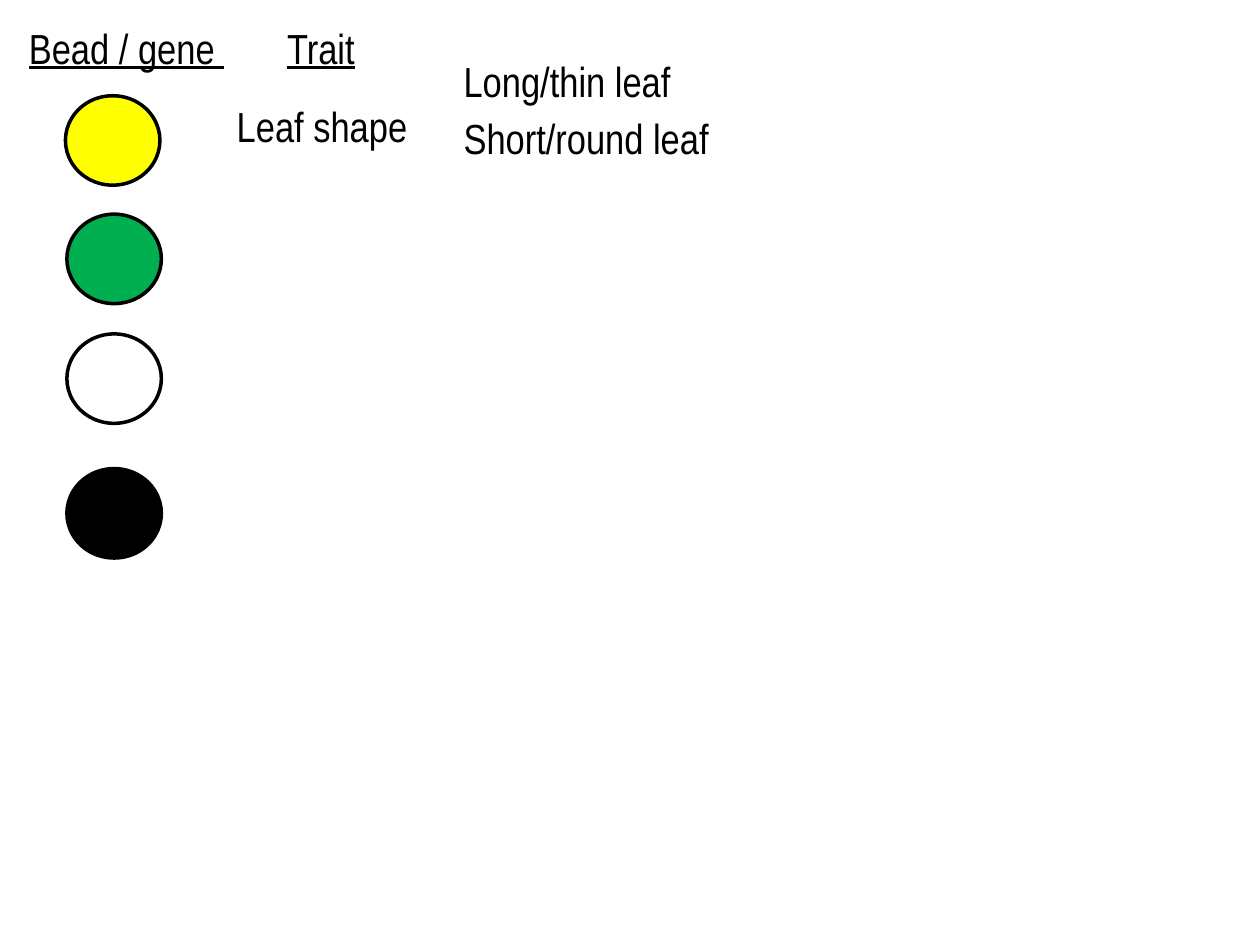
from pptx import Presentation
from pptx.dml.color import RGBColor
from pptx.enum.shapes import MSO_SHAPE
from pptx.enum.text import MSO_AUTO_SIZE
from pptx.util import Pt

COLORS = {
    "black": "000000",
    "white": "FFFFFF",
    "yellow": "FFFF00",
    "green": "00B050",
}
FONT = "Arial Narrow"


def rgb(name):
    """Return the named colour."""
    return RGBColor.from_string(COLORS[name])


def add_bead(s, left, top, color):
    """Draw one outlined bead."""
    sp = s.shapes.add_shape(MSO_SHAPE.OVAL, Pt(left), Pt(top), Pt(54), Pt(51.1))
    sp.shadow.inherit = False
    sp.fill.solid()
    sp.fill.fore_color.rgb = rgb(color)
    sp.line.color.rgb = rgb("black")
    sp.line.width = Pt(2)


def add_label(s, left, top, width, runs):
    """Add a one-line label from (text, underlined) runs."""
    sp = s.shapes.add_textbox(Pt(left), Pt(top), Pt(width), Pt(36.7))
    tf = sp.text_frame
    tf.word_wrap = True
    tf.auto_size = MSO_AUTO_SIZE.SHAPE_TO_FIT_TEXT
    p = tf.paragraphs[0]
    for text, underlined in runs:
        r = p.add_run()
        r.text = text
        r.font.name = FONT
        r.font.size = Pt(24)
        r.font.underline = underlined
        r.font.color.rgb = rgb("black")


def main():
    """Build the bead and trait key."""
    prs = Presentation()
    prs.slide_width, prs.slide_height = Pt(720), Pt(540)
    s = prs.slides.add_slide(prs.slide_layouts[6])

    beads = [
        (37.4, 54.7, "yellow"),
        (38.2, 122.4, "green"),
        (38.2, 190.8, "white"),
        (38.2, 267.8, "black"),
    ]
    for left, top, color in beads:
        add_bead(s, left, top, color)

    labels = [
        (9.4, 9.4, 130.3, [("Bead / gene ", True)]),
        (157, 9.4, 96.5, [("Trait", True), (" ", False)]),
        (128.2, 54, 153.4, [("Leaf shape", False)]),
        (257.8, 28.1, 152.6, [("Long/thin leaf", False)]),
        (257.8, 60.5, 193, [("Short/round leaf", False)]),
    ]
    for left, top, width, runs in labels:
        add_label(s, left, top, width, runs)

    prs.save("out.pptx")


if __name__ == "__main__":
    main()
